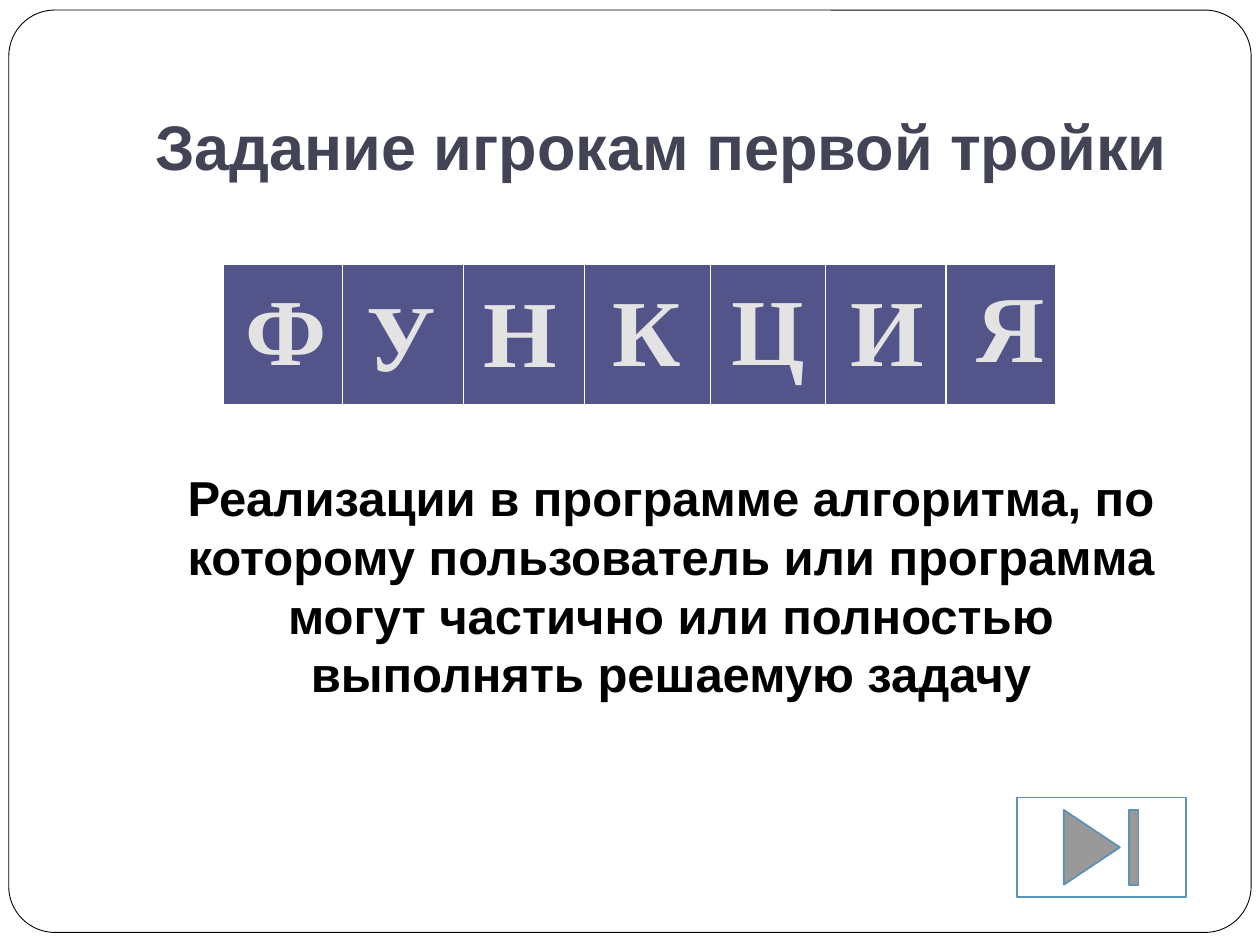
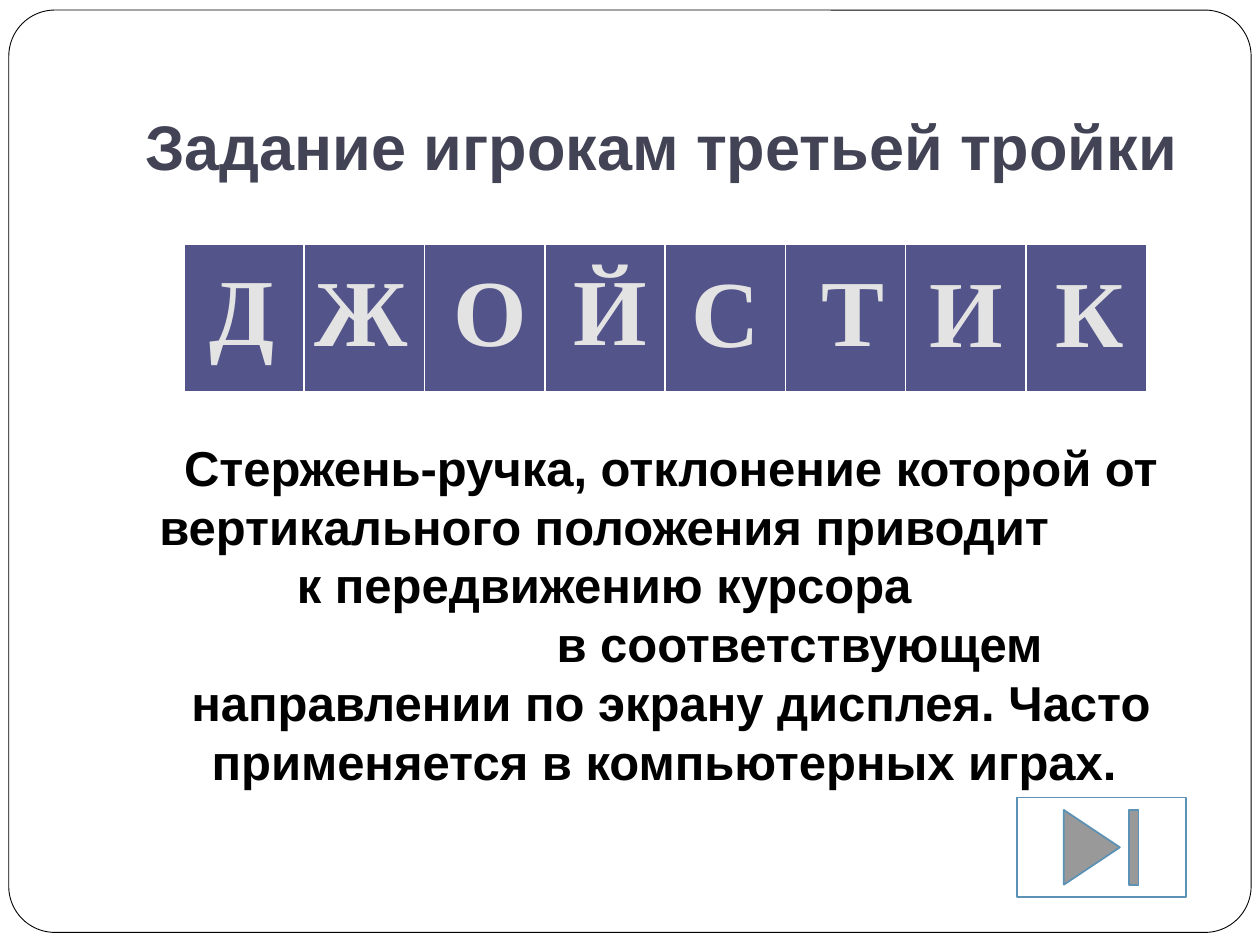
from pptx import Presentation
from pptx.dml.color import RGBColor
from pptx.enum.shapes import MSO_SHAPE
from pptx.enum.text import MSO_ANCHOR, MSO_AUTO_SIZE, PP_ALIGN
from pptx.oxml.ns import qn
from pptx.util import Inches, Pt
from lxml.etree import SubElement

# Shared colours
WHITE, BLACK = "FFFFFF", "000000"
HEAD, TILE = "424456", "53548A"
GLYPH, EDGE, BUTTON = "E3E3E3", "3D405C", "5C92B5"

# Each letter: text, left, top, box width
FUNCTION = [("Ф", 1.85, 2.1, 0.8), ("У", 2.81, 2.15, 0.67),
            ("Н", 3.74, 2.12, 0.75), ("К", 4.76, 2.11, 0.71),
            ("Ц", 5.71, 2.1, 0.75), ("И", 6.65, 2.11, 0.76),
            ("Я", 7.65, 2.08, 0.71)]
JOYSTICK = [("Д", 1.56, 1.94, 0.72), ("Ж", 2.4, 1.95, 0.91),
            ("О", 3.5, 1.95, 0.73), ("Й", 4.45, 1.94, 0.76),
            ("С", 5.39, 1.96, 0.64), ("Т", 6.42, 1.95, 0.69),
            ("И", 7.28, 1.96, 0.76), ("К", 8.28, 1.96, 0.72)]

# Each clue paragraph: text, shift of its centre to the right
CLUE_ONE = [("Реализации в программе алгоритма, по которому пользователь или "
             "программа могут частично или полностью выполнять решаемую "
             "задачу", 0)]
CLUE_TWO = [("Стержень-ручка, отклонение которой от", 0),
            ("вертикального положения приводит", -0.53),
            ("к передвижению курсора", -0.53),
            ("в соответствующем", 1.02),
            ("направлении по экрану дисплея. Часто применяется в "
             "компьютерных играх. ", 0)]


def color(text):
    return RGBColor.from_string(text)


def place(shape, left, top, width, height):
    shape.left, shape.top = Inches(left), Inches(top)
    shape.width, shape.height = Inches(width), Inches(height)


def style(para, face, size, tint):
    para.alignment = PP_ALIGN.CENTER
    font = para.font
    font.name, font.size, font.bold = face, Pt(size), True
    font.color.rgb = color(tint)


def add_box(slide, kind, area, line, weight):
    box = slide.shapes.add_shape(kind, *map(Inches, area))
    box.shadow.inherit = False
    box.fill.solid()
    box.fill.fore_color.rgb = color(WHITE)
    box.line.color.rgb = color(line)
    box.line.width = Pt(weight)
    return box


def add_frame(slide, layout):
    """Draw the rounded page frame and hand it to the layout."""
    frame = add_box(slide, MSO_SHAPE.ROUNDED_RECTANGLE,
                    (0.07, 0.08, 9.86, 7.32), BLACK, 0.5)
    frame.adjustments[0] = 0.05
    layout.shapes._spTree.insert(2, frame._element)


def set_title(slide, text):
    title = slide.shapes.title
    place(title, 1, 0.3, 8.5, 1.25)
    frame = title.text_frame
    frame.auto_size = MSO_AUTO_SIZE.NONE
    frame.vertical_anchor = MSO_ANCHOR.BOTTOM
    frame.margin_bottom = Inches(0.1)
    frame.text = text
    style(frame.paragraphs[0], "Arial", 36, HEAD)


def set_clue(slide, top, parts):
    body = slide.placeholders[1]
    place(body, 1, top, 8.5, 6.58 - top)
    frame = body.text_frame
    frame.auto_size = MSO_AUTO_SIZE.NONE
    frame.text = "\n".join(text for text, _ in parts)
    for para, (_, shift) in zip(frame.paragraphs, parts):
        style(para, "Arial", 28, BLACK)
        para.space_before, para.line_spacing = Pt(0), 1.0
        # Plain paragraph, margins move its centre
        props = para._p.get_or_add_pPr()
        props.set("marL", str(Inches(0.15 + 2 * max(shift, 0))))
        props.set("marR", str(Inches(2 * max(-shift, 0))))
        props.set("indent", "0")
        bullet = SubElement(props, qn("a:buNone"))
        props.find(qn("a:defRPr")).addprevious(bullet)


def add_tiles(slide, left, top, height, widths):
    area = map(Inches, (left, top, sum(widths), height))
    table = slide.shapes.add_table(1, len(widths), *area).table
    for column, width in zip(table.columns, widths):
        column.width = Inches(width)
    for cell in table.iter_cells():
        cell.fill.solid()
        cell.fill.fore_color.rgb = color(TILE)


def add_letter(slide, text, left, top, width):
    box = slide.shapes.add_textbox(*map(Inches, (left, top, width, 1.01)))
    frame = box.text_frame
    frame.word_wrap = False
    frame.auto_size = MSO_AUTO_SIZE.SHAPE_TO_FIT_TEXT
    frame.text = text
    para = frame.paragraphs[0]
    style(para, "Times New Roman", 54, GLYPH)
    # Thin outline of the glyph
    props = para.runs[0]._r.get_or_add_rPr()
    line = SubElement(props, qn("a:ln"), w=str(Pt(1)))
    fill = SubElement(line, qn("a:solidFill"))
    SubElement(fill, qn("a:srgbClr"), val=EDGE)


def add_task(deck, title, clue, top, tiles, word):
    slide = deck.slides.add_slide(deck.slide_layouts[1])
    set_title(slide, title)
    set_clue(slide, top, clue)
    add_tiles(slide, *tiles)
    for letter in word:
        add_letter(slide, *letter)
    add_box(slide, MSO_SHAPE.ACTION_BUTTON_END,
            (8.07, 6.33, 1.34, 0.79), BUTTON, 1)
    return slide


def main():
    deck = Presentation()
    deck.slide_width, deck.slide_height = Inches(10), Inches(7.5)

    first = add_task(deck, "Задание игрокам первой тройки", CLUE_ONE, 3.66,
                     (1.77, 2.1, 1.11,
                      [0.95, 0.96, 0.96, 1, 0.91, 0.96, 0.87]), FUNCTION)
    count = len(JOYSTICK)
    add_task(deck, "Задание игрокам третьей тройки", CLUE_TWO, 3.42,
             (1.46, 1.94, 1.17, [7.64 / count] * count), JOYSTICK)
    add_frame(first, deck.slide_layouts[1])

    deck.save("out.pptx")


if __name__ == "__main__":
    main()
